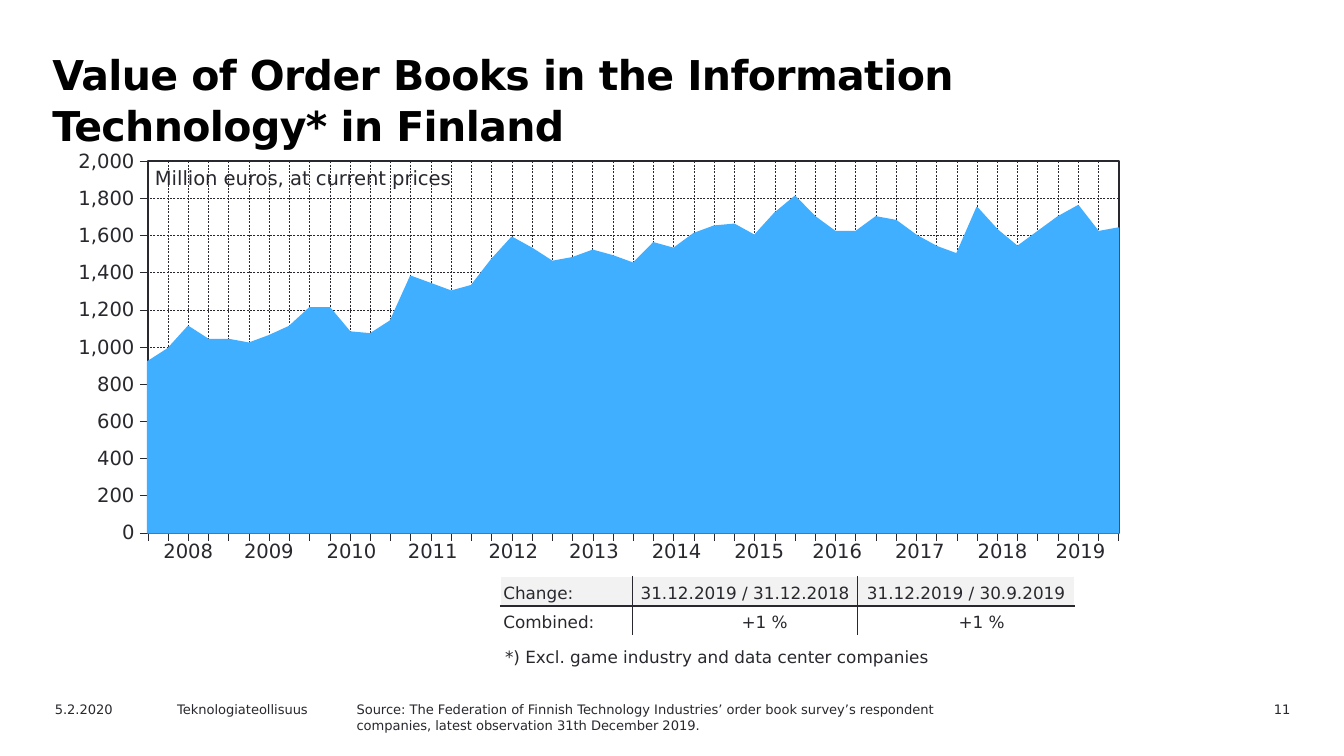
import dataclasses

import lxml.etree
import pptx
import pptx.chart.data
import pptx.dml.color
import pptx.enum.chart
import pptx.enum.dml
import pptx.enum.text
import pptx.oxml
import pptx.oxml.ns
import pptx.util

ALIGN = pptx.enum.text.PP_ALIGN
ANCHOR = pptx.enum.text.MSO_ANCHOR
QN = pptx.oxml.ns.qn


@dataclasses.dataclass(frozen=True)
class Theme:
    font: str = "DejaVu Sans"
    chart_font: str = "Arial"
    ink: str = "29282E"
    title_ink: str = "000000"
    area: str = "40AFFF"
    band: str = "F2F2F2"
    paper: str = "FFFFFF"
    title_size: float = 22
    chart_size: float = 18.2
    label_size: float = 10.5
    note_size: float = 9
    footer_size: float = 7


THEME = Theme()

ORDER_BOOK = [
    920, 990, 1110, 1040, 1040, 1020, 1060, 1110, 1210, 1210, 1080, 1070,
    1140, 1380, 1340, 1300, 1330, 1470, 1590, 1530, 1460, 1480, 1520, 1490,
    1450, 1560, 1530, 1610, 1650, 1660, 1600, 1720, 1810, 1700, 1620, 1620,
    1700, 1680, 1600, 1540, 1500, 1750, 1630, 1540, 1620, 1700, 1760, 1620, 1640]
YEAR_COLUMNS = [6, 6, 6.3, 5.8, 6.2, 5.8, 6.5, 5.8, 5.8, 6.5, 5.8, 5.8]
CHANGES = [("Change:", "31.12.2019 / 31.12.2018", "31.12.2019 / 30.9.2019"),
           ("Combined:", "+1 %", "+1 %")]


def grid(*cells):
    """Grid columns and rows (100 columns across the slide) as lengths."""
    return [pptx.util.Inches(cell / 10) for cell in cells]


def inside(box, left, top, width, height):
    return box[0] + left, box[1] + top, width, height


def color(code):
    return pptx.dml.color.RGBColor.from_string(code)


def style_font(font, size, ink=THEME.ink, bold=False, name=THEME.font):
    font.name, font.size, font.bold = name, pptx.util.Pt(size), bold
    font.color.rgb = color(ink)


def write(frame, text, size, align=ALIGN.LEFT, **style):
    paragraph = frame.paragraphs[0]
    paragraph.alignment = align
    run = paragraph.add_run()
    run.text = text
    style_font(run.font, size, **style)
    return run


def add_label(slide, box, text, size, align=ALIGN.LEFT, wrap=True):
    frame = slide.shapes.add_textbox(*grid(*box)).text_frame
    frame.word_wrap = wrap
    write(frame, text, size, align)


def place_title(slide, box):
    title = slide.shapes.title
    title.left, title.top, title.width, title.height = grid(*box)
    frame = title.text_frame
    frame.auto_size = pptx.enum.text.MSO_AUTO_SIZE.NONE
    frame.vertical_anchor = ANCHOR.TOP
    frame.margin_left, frame.margin_top = grid(1.1, 0.5)
    run = write(frame, "Value of Order Books in the Information Technology* in Finland",
                THEME.title_size, ink=THEME.title_ink, bold=True)
    frame.paragraphs[0].line_spacing = pptx.util.Pt(27)
    run.font._element.set("spc", "-30")


def style_line(line, width, dash=None, ink=THEME.ink):
    line.color.rgb, line.width = color(ink), pptx.util.Pt(width)
    if dash:
        line.dash_style = dash


def style_axis(axis):
    axis.major_tick_mark = pptx.enum.chart.XL_TICK_MARK.OUTSIDE
    axis.minor_tick_mark = pptx.enum.chart.XL_TICK_MARK.NONE
    axis.has_major_gridlines = True
    style_line(axis.format.line, 0.22)
    style_line(axis.major_gridlines.format.line, 0.25, pptx.enum.dml.MSO_LINE.DASH)


def frame_plot(chart, **shares):
    """Fix the inner plot area as shares of the chart and outline it."""
    plot_area = chart._chartSpace.chart.plotArea
    for old in plot_area.findall(QN("c:layout")):
        plot_area.remove(old)
    layout = lxml.etree.Element(QN("c:layout"))
    manual = lxml.etree.SubElement(layout, QN("c:manualLayout"))
    settings = {"layoutTarget": "inner", "xMode": "edge", "yMode": "edge", **shares}
    for tag, value in settings.items():
        lxml.etree.SubElement(manual, QN(f"c:{tag}")).set("val", str(value))
    plot_area.insert(0, layout)
    plot_area.append(pptx.oxml.parse_xml(
        f'<c:spPr {pptx.oxml.ns.nsdecls("c", "a")}><a:noFill/><a:ln w="12700">'
        f'<a:solidFill><a:srgbClr val="{THEME.ink}"/></a:solidFill></a:ln></c:spPr>'))
    for cross in plot_area.iter(QN("c:crossBetween")):
        cross.set("val", "midCat")


def place_order_chart(slide, box):
    data = pptx.chart.data.CategoryChartData()
    data.categories = [str(quarter) for quarter in range(1, len(ORDER_BOOK) + 1)]
    data.add_series("Series 1", ORDER_BOOK)
    chart = slide.shapes.add_chart(
        pptx.enum.chart.XL_CHART_TYPE.AREA_STACKED,
        *grid(*inside(box, 0, 0, box[2], 31.2)), data).chart
    chart.has_legend = chart.has_title = False
    style_font(chart.font, THEME.chart_size, bold=True, name=THEME.chart_font)
    chart.plots[0].vary_by_categories = False

    # Axes
    quarters, euros = chart.category_axis, chart.value_axis
    style_axis(quarters)
    style_axis(euros)
    quarters.tick_label_position = pptx.enum.chart.XL_TICK_LABEL_POSITION.NONE
    euros.minimum_scale, euros.maximum_scale, euros.major_unit = 0, 2000, 200
    euros.tick_labels.number_format = "#,##0"
    euros.tick_labels.number_format_is_linked = False
    style_font(euros.tick_labels.font, THEME.label_size)
    frame_plot(chart, x=0.074, y=0.029, w=0.787, h=0.886)

    # Order book area
    orders = chart.plots[0].series[0].format
    orders.fill.solid()
    orders.fill.fore_color.rgb = color(THEME.area)
    style_line(orders.line, 0.88, ink=THEME.area)

    # Unit and year labels
    add_label(slide, inside(box, 6.35, 0.75, 24.4, 2.7), "Million euros, at current prices",
              THEME.label_size, wrap=False)
    years = add_plain_table(slide, inside(box, 6.8, 28.6, sum(YEAR_COLUMNS), 3.2),
                            YEAR_COLUMNS, 1)
    for offset, cell in enumerate(years.iter_cells()):
        write(cell.text_frame, str(2008 + offset), THEME.label_size, ALIGN.CENTER)
        cell.fill.background()
        set_borders(cell, {side: None for side in "LRTB"})


def add_plain_table(slide, box, columns, rows):
    table = slide.shapes.add_table(rows, len(columns), *grid(*box)).table
    table.first_row = table.horz_banding = False
    for column, width in zip(table.columns, grid(*columns)):
        column.width = width
    return table


def set_borders(cell, sides):
    properties = cell._tc.get_or_add_tcPr()
    for position, side in enumerate("LRTB"):
        edge = lxml.etree.Element(QN(f"a:ln{side}"), w="12700")
        if sides[side]:
            fill = lxml.etree.SubElement(edge, QN("a:solidFill"))
            lxml.etree.SubElement(fill, QN("a:srgbClr"), val=sides[side])
        else:
            lxml.etree.SubElement(edge, QN("a:noFill"))
        properties.insert(position, edge)


def place_changes(slide, box):
    columns = [9.8, 16.75, 16.15]
    table = add_plain_table(slide, inside(box, 0.65, 0, sum(columns), 4.4), columns, 2)
    for r, values in enumerate(CHANGES):
        for c, value in enumerate(values):
            cell = table.cell(r, c)
            is_result = r == 1 and c > 0
            cell.vertical_anchor = ANCHOR.BOTTOM
            cell.margin_left, cell.margin_top, cell.margin_right, cell.margin_bottom = grid(
                0.2, 0.2, 5.2 if is_result else 0.2, 0.2)
            align = ALIGN.RIGHT if is_result else ALIGN.CENTER if c else ALIGN.LEFT
            write(cell.text_frame, value, THEME.note_size, align)
            cell.fill.solid()
            cell.fill.fore_color.rgb = color(THEME.paper if r else THEME.band)
            # Only the rules between cells are dark
            inner = {"L": c > 0, "R": c < 2, "T": r > 0, "B": r < 1}
            set_borders(cell, {side: THEME.ink if dark else THEME.paper
                               for side, dark in inner.items()})
    add_label(slide, inside(box, 0, 4.75, 43.3, 2.5),
              "*) Excl. game industry and data center companies", THEME.note_size)


def place_footer(slide, box):
    parts = [
        (0, 10, 1.8, "5.2.2020", ALIGN.LEFT),
        (9.1, 19.4, 1.8, "Teknologiateollisuus", ALIGN.LEFT),
        (22.45, 50, 2.6, "Source: The Federation of Finnish Technology Industries’ order book "
         "survey’s respondent companies, latest observation 31th December 2019.", ALIGN.LEFT),
        (box[2] - 9.4, 9.4, 1.8, "11", ALIGN.RIGHT)]
    for left, width, height, text, align in parts:
        add_label(slide, inside(box, left, 0, width, height), text, THEME.footer_size, align)


def main():
    deck = pptx.Presentation()
    deck.slide_width, deck.slide_height = grid(100, 56.25)
    slide = deck.slides.add_slide(deck.slide_layouts[5])
    place_title(slide, (2.8, 3.1, 87.4, 8))
    place_order_chart(slide, (4.2, 11.1, 91.8, 31.8))
    place_changes(slide, (36.6, 42.9, 43.3, 7.3))
    place_footer(slide, (3.1, 51.7, 93.9, 2.6))
    deck.save("out.pptx")


if __name__ == "__main__":
    main()
